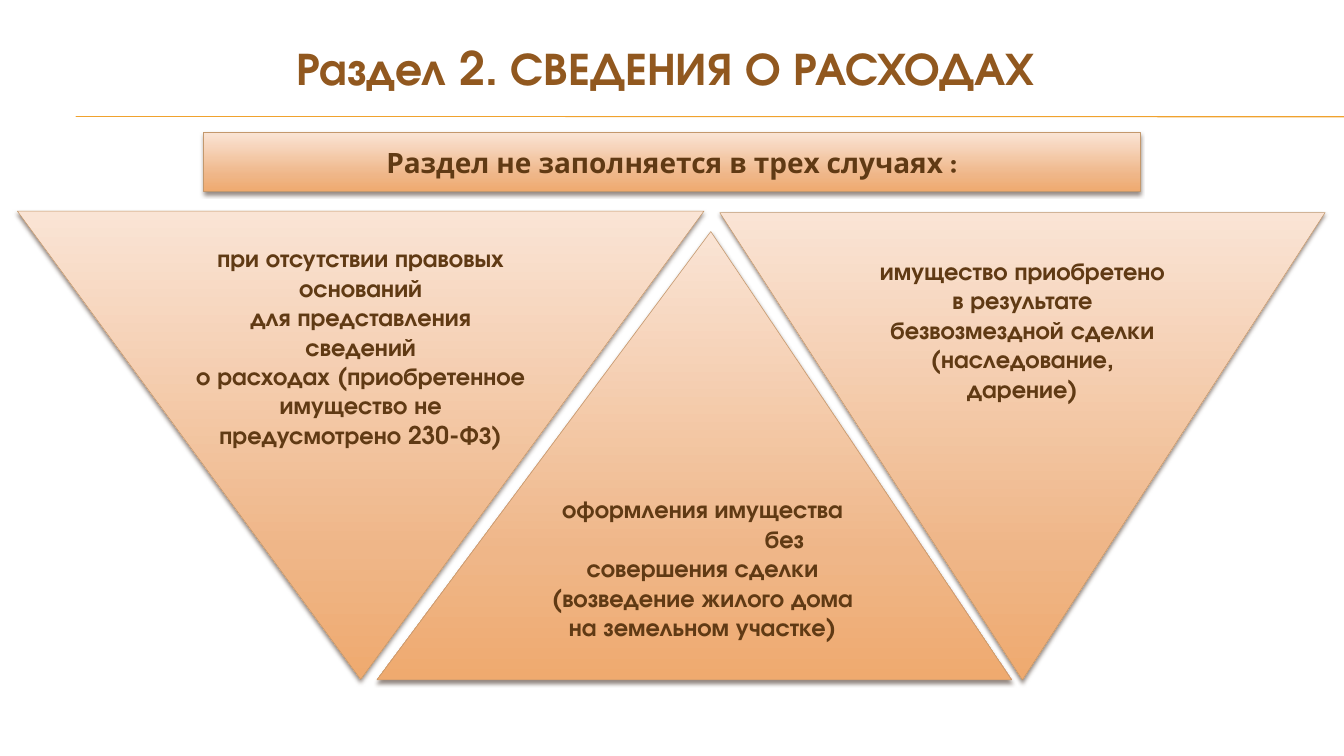
from copy import deepcopy

from lxml.etree import SubElement
from pptx import Presentation
from pptx.dml.color import RGBColor
from pptx.enum.shapes import MSO_CONNECTOR, MSO_SHAPE
from pptx.enum.text import MSO_ANCHOR, PP_ALIGN
from pptx.oxml.ns import qn
from pptx.util import Pt

PX = 9525
WIDTH, HEIGHT = 2560, 1440
COLORS = {
    "title": "91581F",
    "text": "603A14",
    "rule": "F0A22E",
    "outline": "C3986D",
    "shadow": "4E3B30",
    "light": "FAE4D5",
    "middle": "EFB688",
    "deep": "EFAA6F",
}
GRADIENT = [(0, "light"), (0.72, "middle"), (1, "deep")]
HEADING_FONT = "TeX Gyre Adventor"
BANNER_FONT = "Karla"


def color(name):
    """Return the named colour."""
    return RGBColor.from_string(COLORS[name])


def scale(*lengths):
    """Turn lengths in px into EMU."""
    return [length * PX for length in lengths]


def write(frame, lines, size=35, font=HEADING_FONT, ink="text", indents=None, top=5):
    """Fill a text frame with centred bold paragraphs."""
    frame.word_wrap = True
    frame.vertical_anchor = MSO_ANCHOR.MIDDLE
    frame.margin_top = top * PX
    for index, line in enumerate(lines):
        paragraph = frame.paragraphs[0] if index == 0 else frame.add_paragraph()
        paragraph.alignment = PP_ALIGN.CENTER
        if indents and index in indents:
            properties = paragraph._p.get_or_add_pPr()
            properties.set("marL", str(indents[index] * PX))
            properties.set("indent", "0")
        run = paragraph.add_run()
        run.text = line
        run.font.size = Pt(size)
        run.font.name = font
        run.font.bold = True
        run.font.color.rgb = color(ink)


def add_shadow(shape):
    """Give a shape a soft shadow straight below it."""
    shape.shadow.inherit = False
    effects = shape._element.spPr.find(qn("a:effectLst"))
    outer = SubElement(effects, qn("a:outerShdw"), blurRad=str(Pt(6)),
                       dist=str(Pt(4)), dir="5400000", rotWithShape="0")
    tint = SubElement(outer, qn("a:srgbClr"), val=COLORS["shadow"])
    SubElement(tint, qn("a:alpha"), val="60000")


def add_panel(slide, kind, box, lines, **text_format):
    """Place a shaded panel with its text in the given box."""
    panel = slide.shapes.add_shape(kind, *scale(*box))
    panel.fill.gradient()
    panel.fill.gradient_angle = 270
    stops = panel._element.spPr.find(qn("a:gradFill")).find(qn("a:gsLst"))
    stops.append(deepcopy(stops[0]))
    for stop, (position, name) in zip(panel.fill.gradient_stops, GRADIENT):
        stop.position = position
        stop.color.rgb = color(name)
    panel.line.color.rgb = color("outline")
    panel.line.width = Pt(0.79)
    add_shadow(panel)
    write(panel.text_frame, lines, **text_format)
    return panel


def add_header(slide, box):
    """Place the section title and the double rule under it."""
    left, top, width, height = box
    title = slide.shapes.add_textbox(*scale(*box))
    write(title.text_frame, ["Раздел 2. СВЕДЕНИЯ О РАСХОДАХ "], size=66, ink="title")
    for start, end in ((35, 35), (36, 37)):
        rule = slide.shapes.add_connector(
            MSO_CONNECTOR.STRAIGHT,
            *scale(144, top + height + start, WIDTH, top + height + end))
        rule.line.color.rgb = color("rule")
        rule.line.width = Pt(0.75)
        SubElement(rule._element.spPr, qn("a:effectLst"))


def add_cases(slide, box):
    """Place the three interlocking triangles, one for each case."""
    left, top, width, height = box
    add_panel(slide, MSO_SHAPE.FLOWCHART_MERGE,
              (left + width - 1153, top + 3, 1153, height - 3),
              ["имущество приобретено",
               "в результате безвозмездной сделки (наследование, дарение)"])
    add_panel(slide, MSO_SHAPE.FLOWCHART_MERGE, (left, top, 1308, height - 1),
              ["при отсутствии правовых оснований",
               "для представления сведений",
               "о расходах (приобретенное имущество не предусмотрено 230-ФЗ)"],
              top=74)
    middle = add_panel(slide, MSO_SHAPE.ISOSCELES_TRIANGLE,
                       (left + 685, top + 39, 1209, height - 39),
                       ["оформления имущества", "без",
                        "совершения сделки (возведение жилого дома на земельном участке)"],
                       indents={1: 312})
    middle.adjustments[0] = 0.526


def main():
    """Build the slide and save it."""
    presentation = Presentation()
    presentation.slide_width, presentation.slide_height = scale(WIDTH, HEIGHT)
    slide = presentation.slides.add_slide(presentation.slide_layouts[6])
    add_header(slide, (388, 70, 1784, 116))
    add_panel(slide, MSO_SHAPE.RECTANGLE, (388, 252, 1784, 113),
              ["Раздел не заполняется в трех случаях :"], size=40, font=BANNER_FONT)
    add_cases(slide, (33, 402, 2491, 893))
    presentation.save("out.pptx")


if __name__ == "__main__":
    main()
